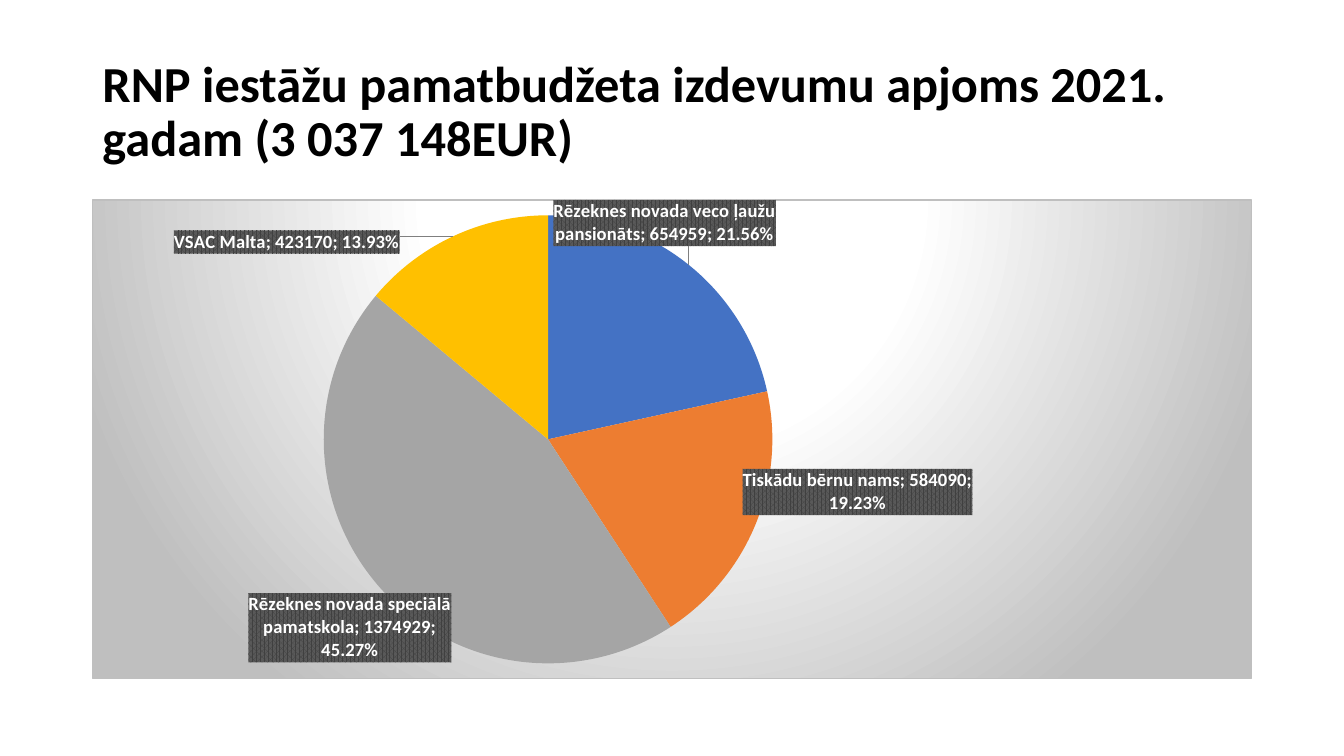
"""Build the slide on the 2021 budget of the RNP institutions."""
from lxml import etree
from pptx import Presentation
from pptx.chart.data import CategoryChartData
from pptx.dml.color import RGBColor
from pptx.enum.chart import XL_CHART_TYPE
from pptx.enum.text import MSO_ANCHOR, MSO_AUTO_SIZE, PP_ALIGN
from pptx.oxml import parse_xml
from pptx.oxml.ns import qn
from pptx.util import Pt

PIE = XL_CHART_TYPE.PIE
MIDDLE = MSO_ANCHOR.MIDDLE
NO_FIT = MSO_AUTO_SIZE.NONE
LEFT = PP_ALIGN.LEFT
FONT = "Calibri"
COLORS = {
    "text": "000000", "light": "FFFFFF", "edge": "BFBFBF",
    "label_fore": "404040", "label_back": "595959", "leader": "7F7F7F",
}
INSTITUTIONS = [
    ("Rēzeknes novada veco ļaužu pansionāts", 654959, "4472C4"),
    ("Tiskādu bērnu nams", 584090, "ED7D31"),
    ("Rēzeknes novada speciālā pamatskola", 1374929, "A5A5A5"),
    ("VSAC Malta", 423170, "FFC000"),
]
LABEL_OFFSETS = [(-0.12, -0.03), (-0.016, -0.12), (0.065, 0.002), (-0.044, 0.047)]
NAMESPACES = (
    'xmlns:c="http://schemas.openxmlformats.org/drawingml/2006/chart" '
    'xmlns:a="http://schemas.openxmlformats.org/drawingml/2006/main"'
)


def color_xml(name):
    """Return the XML of a named colour."""
    return f'<a:srgbClr val="{COLORS[name]}"/>'


def style_font(font, size, bold=False):
    """Set the typeface, size, weight and colour of a font."""
    font.name, font.size, font.bold = FONT, Pt(size), bold
    font.color.rgb = RGBColor.from_string(COLORS["text"])


def fill_title(title, text):
    """Place the title and write its single run."""
    title.left, title.top, title.width, title.height = Pt(66), Pt(28.8), Pt(828), Pt(104.4)
    frame = title.text_frame
    frame.vertical_anchor, frame.auto_size, frame.word_wrap = MIDDLE, NO_FIT, True
    para = frame.paragraphs[0]
    para.alignment, para.line_spacing = LEFT, 0.9
    span = para.add_run()
    span.text = text
    style_font(span.font, 36, True)


def label_style_xml(position):
    """Return the number format, box, text and contents shared by all labels."""
    return f"""<c:numFmt formatCode="0.00%" sourceLinked="0"/>
    <c:spPr><a:pattFill prst="pct75"><a:fgClr>{color_xml("label_fore")}</a:fgClr>
    <a:bgClr>{color_xml("label_back")}</a:bgClr></a:pattFill><a:ln><a:noFill/></a:ln></c:spPr>
    <c:txPr><a:bodyPr wrap="square" anchor="ctr"/><a:lstStyle/><a:p><a:pPr>
    <a:defRPr sz="1330" b="1"><a:solidFill>{color_xml("light")}</a:solidFill>
    <a:latin typeface="{FONT}"/></a:defRPr></a:pPr><a:endParaRPr lang="lv-LV"/></a:p></c:txPr>
    <c:dLblPos val="{position}"/><c:showLegendKey val="0"/><c:showVal val="1"/>
    <c:showCatName val="1"/><c:showSerName val="0"/><c:showPercent val="1"/>
    <c:showBubbleSize val="0"/><c:separator>; </c:separator>"""


def point_label_xml(index, x, y):
    """Return one label moved from its best-fit place by chart fractions."""
    return f"""<c:dLbl><c:idx val="{index}"/><c:layout><c:manualLayout>
    <c:x val="{x}"/><c:y val="{y}"/></c:manualLayout></c:layout>
    {label_style_xml("bestFit")}</c:dLbl>"""


def add_labels(series):
    """Attach the placed labels and their leader lines to the series."""
    labels = "".join(point_label_xml(i, *offset) for i, offset in enumerate(LABEL_OFFSETS))
    element = parse_xml(f"""<c:dLbls {NAMESPACES}>{labels}{label_style_xml("ctr")}
    <c:showLeaderLines val="1"/><c:leaderLines><c:spPr><a:ln w="9525"><a:solidFill>
    {color_xml("leader")}</a:solidFill></a:ln></c:spPr></c:leaderLines></c:dLbls>""")
    series._element.find(qn("c:cat")).addprevious(element)


def set_plot_layout(chart, x, y, width, height):
    """Fix the inner plot area by chart fractions."""
    area = chart._chartSpace.find(".//" + qn("c:plotArea"))
    for old in area.findall(qn("c:layout")):
        area.remove(old)
    layout = etree.Element(qn("c:layout"))
    manual = etree.SubElement(layout, qn("c:manualLayout"))
    settings = {"layoutTarget": "inner", "xMode": "edge", "yMode": "edge",
                "x": x, "y": y, "w": width, "h": height}
    for name, value in settings.items():
        etree.SubElement(manual, qn(f"c:{name}")).set("val", str(value))
    area.insert(0, layout)


def set_background(chart):
    """Give the chart area a radial gradient and a thin border."""
    stops = [(0, "light"), (39000, "light"), (100000, "edge")]
    stops_xml = "".join(f'<a:gs pos="{pos}">{color_xml(name)}</a:gs>' for pos, name in stops)
    element = parse_xml(f"""<c:spPr {NAMESPACES}><a:gradFill><a:gsLst>{stops_xml}</a:gsLst>
    <a:path path="circle"><a:fillToRect l="50000" t="-80000" r="50000" b="180000"/></a:path>
    </a:gradFill><a:ln w="9525"><a:solidFill>{color_xml("edge")}</a:solidFill></a:ln></c:spPr>""")
    chart._chartSpace.find(qn("c:chart")).addnext(element)


def add_budget_pie(page):
    """Add the pie of expenses by institution."""
    data = CategoryChartData()
    data.categories = [name for name, _, _ in INSTITUTIONS]
    data.add_series("Series 1", [amount for _, amount, _ in INSTITUTIONS])
    frame = page.shapes.add_chart(PIE, Pt(66), Pt(142.5), Pt(828), Pt(342.7), data)
    chart = frame.chart
    chart.has_title = chart.has_legend = False
    style_font(chart.font, 10)
    plot = chart.plots[0]
    plot.vary_by_categories = True
    series = plot.series[0]
    for index, (_, _, color) in enumerate(INSTITUTIONS):
        fill = series.points[index].format.fill
        fill.solid()
        fill.fore_color.rgb = RGBColor.from_string(color)
    add_labels(series)
    set_plot_layout(chart, 0.037, 0.032, 0.712, 0.936)
    set_background(chart)


def main():
    """Build and save the deck."""
    deck = Presentation()
    deck.slide_width, deck.slide_height = Pt(960), Pt(540)
    page = deck.slides.add_slide(deck.slide_layouts[5])
    fill_title(page.shapes.title,
               "RNP iestāžu pamatbudžeta izdevumu apjoms 2021. gadam (3 037 148EUR)")
    add_budget_pie(page)
    deck.save("out.pptx")


if __name__ == "__main__":
    main()
